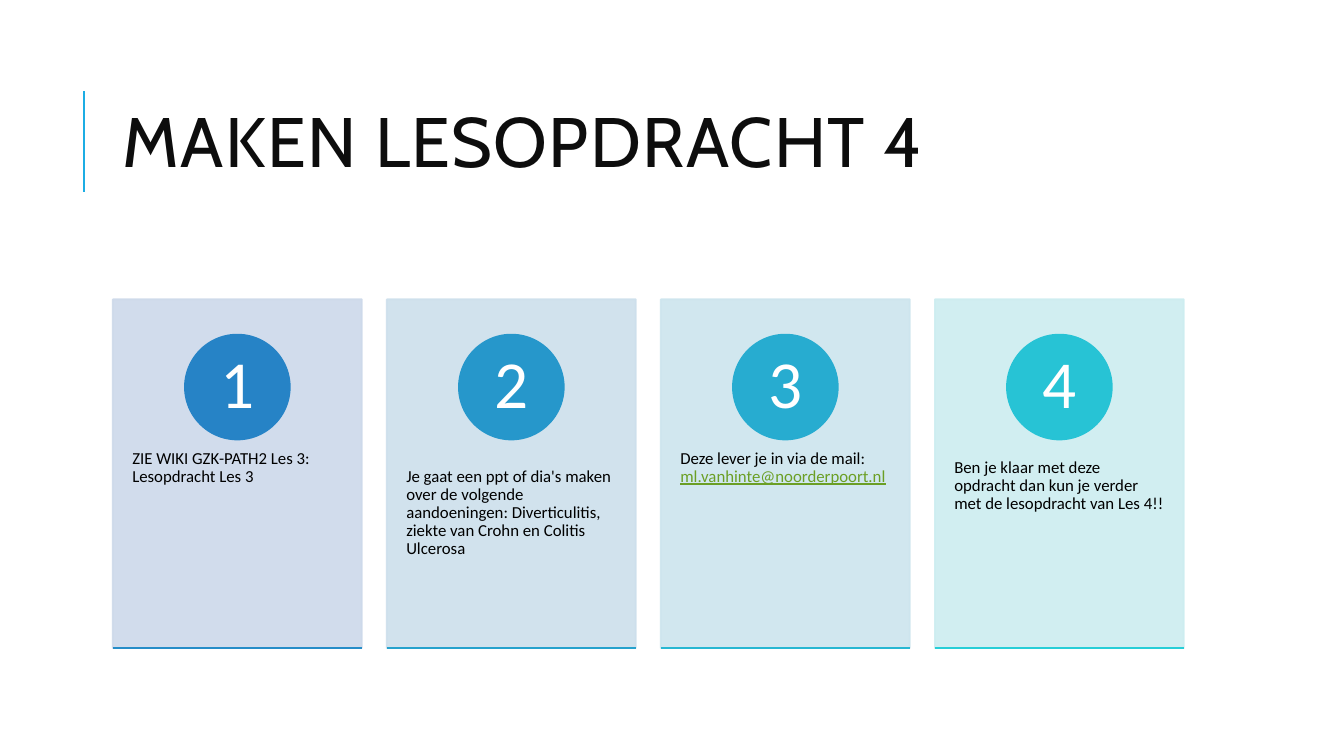
"""Build the slide with four numbered steps of the lesson task."""
from dataclasses import dataclass

from lxml import etree
from pptx import Presentation
from pptx.dml.color import RGBColor
from pptx.enum import shapes, text
from pptx.oxml import ns
from pptx.util import Pt


@dataclass(frozen=True)
class Theme:
    head: str = "Cabin"
    body: str = "Calibri"
    ink: str = "0D0D0D"
    black: str = "000000"
    white: str = "FFFFFF"
    rule: str = "1CADE4"
    link: str = "6B9F25"
    title: float = 50
    digit: float = 48
    note: float = 12
    line: float = 1.25


@dataclass(frozen=True)
class Card:
    note: str
    fill: str
    disc: str
    base: str
    mail: str = ""


@dataclass(frozen=True)
class Box:
    left: float
    top: float
    width: float
    height: float

    def pts(self) -> tuple:
        return Pt(self.left), Pt(self.top), Pt(self.width), Pt(self.height)


THEME = Theme()
LEFT, TOP, WIDTH, HEIGHT, PITCH = 80.64, 213.84, 177.84, 249.12, 195.72
DISC, DIGIT = 74.88, 52.56
CARDS = (
    Card("ZIE WIKI GZK-PATH2 Les 3: Lesopdracht Les 3", "CDD9EA", "2683C6", "268DC8"),
    Card("Je gaat een ppt of dia's maken over de volgende aandoeningen: "
         "Diverticulitis, ziekte van Crohn en Colitis Ulcerosa",
         "CDDFEC", "2697CB", "26A2CD"),
    Card("Deze lever je in via de mail: ", "CDE5EE", "27ACD0", "27B7D2",
         "ml.vanhinte@noorderpoort.nl"),
    Card("Ben je klaar met deze opdracht dan kun je verder met de lesopdracht van Les 4!!",
         "CDEDF0", "27C3D5", "27CED7"),
)


def style(run, face: str, size: float, hue: str) -> None:
    run.font.name = face
    run.font.size = Pt(size)
    run.font.color.rgb = RGBColor.from_string(hue)


def write(slide, box: Box, words: str, face: str, size: float, hue: str,
          pad: tuple, lead: float = 0.9, mid: bool = True):
    frame = slide.shapes.add_textbox(*box.pts()).text_frame
    frame.word_wrap = True
    frame.margin_left = frame.margin_right = Pt(pad[0])
    frame.margin_top = frame.margin_bottom = Pt(pad[1])
    frame.vertical_anchor = text.MSO_ANCHOR.MIDDLE if mid else text.MSO_ANCHOR.TOP
    frame.text = words
    para = frame.paragraphs[0]
    para.line_spacing = lead
    style(para.runs[0], face, size, hue)
    return para


def draw(slide, kind: shapes.MSO_SHAPE, box: Box, hue: str, alpha: int = 100) -> None:
    shape = slide.shapes.add_shape(kind, *box.pts())
    shape.shadow.inherit = False
    shape.fill.solid()
    shape.fill.fore_color.rgb = RGBColor.from_string(hue)
    shape.line.color.rgb = RGBColor.from_string(hue)
    shape.line.width = Pt(THEME.line)
    if alpha < 100:
        for tint in shape.element.spPr.iter(ns.qn("a:srgbClr")):
            etree.SubElement(tint, ns.qn("a:alpha"), val=str(alpha * 1000))


def rule(slide, start: tuple, end: tuple, hue: str, width: float) -> None:
    line = slide.shapes.add_connector(
        shapes.MSO_CONNECTOR.STRAIGHT, *map(Pt, start + end))
    line.line.color.rgb = RGBColor.from_string(hue)
    line.line.width = Pt(width)
    etree.SubElement(line.element.spPr, ns.qn("a:effectLst"))


def step(slide, rank: int, card: Card) -> None:
    left = LEFT + rank * PITCH
    base = TOP + HEIGHT
    draw(slide, shapes.MSO_SHAPE.RECTANGLE, Box(left, TOP, WIDTH, HEIGHT), card.fill, 90)
    note = write(slide, Box(left, 308.16, WIDTH, 149.76), card.note, THEME.body,
                 THEME.note, THEME.black, (13.86, 25.92), mid=False)
    if card.mail:
        mail = note.add_run()
        mail.text = card.mail
        style(mail, THEME.body, THEME.note, THEME.link)
        mail.font.underline = True
    disc = Box(left + (WIDTH - DISC) / 2, 239.04, DISC, DISC)
    draw(slide, shapes.MSO_SHAPE.OVAL, disc, card.disc)
    gap = (DISC - DIGIT) / 2
    digit = write(slide, Box(disc.left + gap, disc.top + gap, DIGIT, DIGIT),
                  str(rank + 1), THEME.body, THEME.digit, THEME.white, (5.76, 0.72))
    digit.alignment = text.PP_ALIGN.CENTER
    rule(slide, (left, base), (left + WIDTH, base), card.base, THEME.line)


def main() -> None:
    deck = Presentation()
    deck.slide_width, deck.slide_height = Pt(960), Pt(540)
    slide = deck.slides.add_slide(deck.slide_layouts[6])
    rule(slide, (60, 136.8), (60, 64.8), THEME.rule, 1.5)
    title = write(slide, Box(LEFT, 46.08, 765.36, 118.08), "MAKEN LESOPDRACHT 4",
                  THEME.head, THEME.title, THEME.ink, (7.2, 3.6), 0.8)
    title.runs[0].font.element.set("spc", "100") if hasattr(
        title.runs[0].font, "element") else title.runs[0].font._element.set("spc", "100")
    for rank, card in enumerate(CARDS):
        step(slide, rank, card)
    deck.save("out.pptx")


if __name__ == "__main__":
    main()
